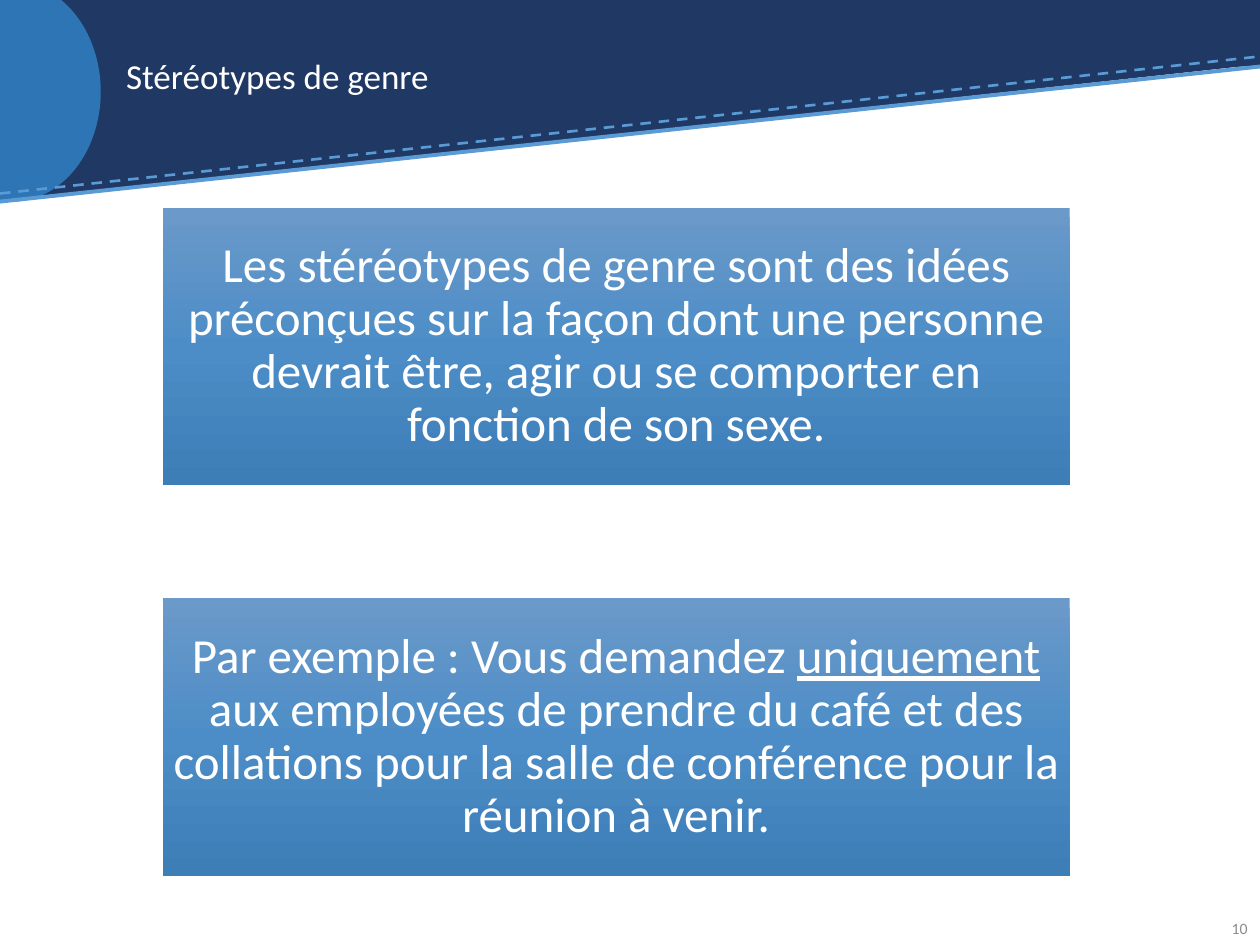
from copy import deepcopy
from dataclasses import dataclass

from pptx import Presentation
from pptx.dml.color import RGBColor
from pptx.enum.dml import MSO_LINE
from pptx.enum.shapes import MSO_CONNECTOR, MSO_SHAPE
from pptx.enum.text import MSO_ANCHOR, PP_ALIGN
from pptx.oxml.ns import qn
from pptx.util import Inches, Pt

RECTANGLE, TRIANGLE, OVAL = MSO_SHAPE.RECTANGLE, MSO_SHAPE.RIGHT_TRIANGLE, MSO_SHAPE.OVAL
STRAIGHT, DASH = MSO_CONNECTOR.STRAIGHT, MSO_LINE.DASH
MIDDLE = MSO_ANCHOR.MIDDLE
LEFT, CENTER, RIGHT = PP_ALIGN.LEFT, PP_ALIGN.CENTER, PP_ALIGN.RIGHT
TITLE_ONLY = 5


@dataclass(frozen=True)
class Theme:
    font: str = "Calibri"
    navy: str = "203864"
    blue: str = "2E75B6"
    accent: str = "5B9BD5"
    white: str = "FFFFFF"
    grey: str = "8C8C8C"
    gradient: tuple = ((0, "6B99C9"), (0.5, "4D8DC7"), (1, "3E7EB7"))
    title_size: int = 20
    body_size: int = 28
    number_size: int = 9


@dataclass(frozen=True)
class Box:
    left: float
    top: float
    width: float
    height: float

    def share(self, x, y, w, h):
        return Box(self.left + x * self.width, self.top + y * self.height,
                   w * self.width, h * self.height)

    def emu(self):
        return [Inches(v) for v in (self.left, self.top, self.width, self.height)]


THEME = Theme()
PAGE = Box(0, 0, 10, 7.5)


def rgb(color):
    return RGBColor.from_string(color)


def add_plain(slide, kind, box, color=None):
    shape = slide.shapes.add_shape(kind, *box.emu())
    shape.shadow.inherit = False
    shape.line.fill.background()
    if color:
        shape.fill.solid()
        shape.fill.fore_color.rgb = rgb(color)
    return shape


def add_rule(slide, box, start, end, width, dash=None):
    left, top, box_width, height = box.emu()
    rule = slide.shapes.add_connector(STRAIGHT, left, top + int(start * height),
                                      left + box_width, top + int(end * height))
    rule.line.color.rgb = rgb(THEME.accent)
    rule.line.width = Pt(width)
    if dash:
        rule.line.dash_style = dash
    properties = rule._element.spPr
    properties.append(properties.makeelement(qn("a:effectLst"), {}))


def write(frame, runs, size, color, align, spacing=1.0):
    frame.word_wrap = True
    frame.vertical_anchor = MIDDLE
    paragraph = frame.paragraphs[0]
    paragraph.alignment = align
    paragraph.line_spacing = spacing
    for text, underlined in runs:
        run = paragraph.add_run()
        run.text = text
        run.font.name = THEME.font
        run.font.size = Pt(size)
        run.font.color.rgb = rgb(color)
        run.font.underline = underlined


def fill_gradient(shape, stops):
    shape.fill.gradient()
    shape.fill.gradient_angle = 270
    stop_list = shape._element.spPr.find(".//" + qn("a:gsLst"))
    stop_list.insert(1, deepcopy(stop_list[0]))
    for stop, (position, color) in zip(shape.fill.gradient_stops, stops):
        stop.position = position
        stop.color.rgb = rgb(color)


def place_header(slide, box, heading):
    add_plain(slide, RECTANGLE, box.share(0, 0, 1, 0.33), THEME.navy)
    wedge = add_plain(slide, TRIANGLE, box.share(0, 0.32, 1, 0.68), THEME.navy)
    wedge._element.spPr.xfrm.set("flipV", "1")
    add_plain(slide, OVAL, box.share(-0.06, -0.09, 0.14, 1.09), THEME.blue)
    add_rule(slide, box, 0.96, 0.28, 1.5, DASH)
    add_rule(slide, box, 1.0, 0.33, 2.25)

    title = slide.shapes.title
    title.left, title.top, title.width, title.height = box.share(0.09, 0.12, 0.8, 0.54).emu()
    write(title.text_frame, [(heading, False)], THEME.title_size, THEME.white, LEFT, 0.9)
    slide.shapes._spTree.append(title._element)


def place_statements(slide, box, statements):
    panel_height = 2.2 / box.height
    step = (1 - panel_height) / (len(statements) - 1)
    for row, runs in enumerate(statements):
        panel = add_plain(slide, RECTANGLE, box.share(0, row * step, 1, panel_height))
        fill_gradient(panel, THEME.gradient)
        frame = panel.text_frame
        frame.margin_left = frame.margin_right = Inches(0.02)
        frame.margin_top = frame.margin_bottom = Inches(0.02)
        write(frame, runs, THEME.body_size, THEME.white, CENTER, 0.9)


def place_number(slide, box, number):
    page_number = slide.shapes.add_textbox(*box.emu())
    write(page_number.text_frame, [(number, False)], THEME.number_size, THEME.grey, RIGHT)


def main():
    presentation = Presentation()
    presentation.slide_width = Inches(PAGE.width)
    presentation.slide_height = Inches(PAGE.height)
    slide = presentation.slides.add_slide(presentation.slide_layouts[TITLE_ONLY])

    definition = [("Les stéréotypes de genre sont des idées préconçues sur la façon dont "
                   "une personne devrait être, agir ou se comporter en fonction de son sexe.",
                   False)]
    example = [("Par exemple : Vous demandez ", False),
               ("uniquement", True),
               (" aux employées de prendre du café et des collations pour la salle de "
                "conférence pour la réunion à venir.", False)]

    place_header(slide, Box(0, 0, PAGE.width, 1.6), "Stéréotypes de genre")
    place_number(slide, Box(9.47, 7.17, 0.53, 0.4), "10")
    place_statements(slide, Box(1.29, 1.65, 7.2, 5.3), [definition, example])
    presentation.save("out.pptx")


if __name__ == "__main__":
    main()
